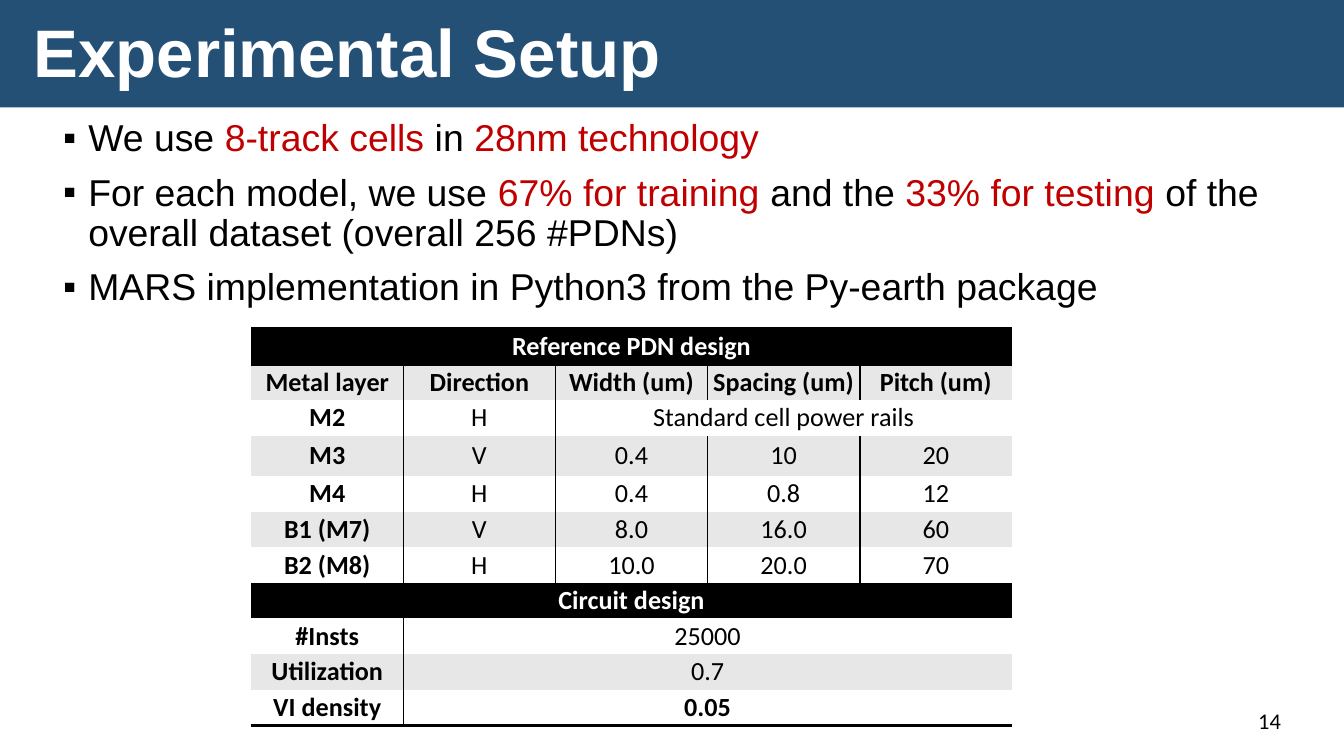
from lxml import etree
from pptx import Presentation
from pptx.dml.color import RGBColor
from pptx.enum.shapes import MSO_SHAPE
from pptx.enum.text import MSO_ANCHOR, MSO_AUTO_SIZE, PP_ALIGN
from pptx.oxml.ns import qn
from pptx.util import Pt

RECT = MSO_SHAPE.RECTANGLE
MIDDLE, BOTTOM = MSO_ANCHOR.MIDDLE, MSO_ANCHOR.BOTTOM
LEFT, CENTER, RIGHT = PP_ALIGN.LEFT, PP_ALIGN.CENTER, PP_ALIGN.RIGHT
NO_FIT = MSO_AUTO_SIZE.NONE

BLUE = RGBColor(0x25, 0x50, 0x76)
RED = RGBColor(0xC0, 0x00, 0x00)
GREY = RGBColor(0xE7, 0xE7, 0xE7)
BLACK = RGBColor(0, 0, 0)
WHITE = RGBColor(255, 255, 255)
PLAIN_GRID = "{2D5ABB26-0587-4C30-8999-92F81FD0307C}"

POINTS = [
    [("We use ", BLACK), ("8-track cells ", RED), ("in ", BLACK),
     ("28nm technology", RED)],
    [("For each model, we use ", BLACK), ("67% for training ", RED),
     ("and the ", BLACK), ("33% for testing ", RED),
     ("of the overall dataset (overall 256 #PDNs)", BLACK)],
    [("MARS implementation in Python3 from the Py-earth package", BLACK)],
]
ROWS = [
    ["Reference PDN design"],
    ["Metal layer", "Direction", "Width (um)", "Spacing (um)", "Pitch (um)"],
    ["M2", "H", "Standard cell power rails"],
    ["M3", "V", "0.4", "10", "20"],
    ["M4", "H", "0.4", "0.8", "12"],
    ["B1 (M7)", "V", "8.0", "16.0", "60"],
    ["B2 (M8)", "H", "10.0", "20.0", "70"],
    ["Circuit design"],
    ["#Insts", "25000"],
    ["Utilization", "0.7"],
    ["VI density", "0.05"],
]
COLS = 5
TALL = 3


def place(shape, box):
    shape.left, shape.top, shape.width, shape.height = map(Pt, box)


def style(para, name, size, color=None, bold=False):
    font = para.font
    font.name, font.size, font.bold = name, Pt(size), bold
    if color is not None:
        font.color.rgb = color


def add_head(slide, box):
    left, top, width, height = box
    band = slide.shapes.add_shape(RECT, *map(Pt, box))
    band.shadow.inherit = False
    band.fill.solid()
    band.fill.fore_color.rgb = BLUE
    band.line.fill.background()
    slide.shapes._spTree.insert(2, band._element)

    title = slide.shapes.title
    place(title, (left + 10.8, top + 7.2, width - 21.6, height - 12.2))
    frame = title.text_frame
    frame.text = "Experimental Setup"
    frame.auto_size = NO_FIT
    frame.vertical_anchor = MIDDLE
    para = frame.paragraphs[0]
    para.alignment = LEFT
    para.line_spacing = 0.9
    style(para, "Arial", 36, WHITE, True)


def add_list(slide, box):
    body = slide.placeholders[1]
    place(body, box)
    frame = body.text_frame
    frame.auto_size = NO_FIT
    for row, parts in enumerate(POINTS):
        para = frame.add_paragraph() if row else frame.paragraphs[0]
        para.line_spacing = 0.9
        para.space_before = Pt(7.5)
        props = para._p.get_or_add_pPr()
        props.set("marL", str(Pt(13.5)))
        props.set("indent", str(-Pt(13.5)))
        etree.SubElement(props, qn("a:buFont"), typeface="Arial")
        etree.SubElement(props, qn("a:buChar"), char="▪")
        style(para, "Arial", 20)
        for text, color in parts:
            run = para.add_run()
            run.text = text
            run.font.color.rgb = color


def add_edge(cell, side, width):
    props = cell._tc.get_or_add_tcPr()
    line = etree.SubElement(props, qn("a:" + side), w=str(Pt(width)))
    fill = etree.SubElement(line, qn("a:solidFill"))
    etree.SubElement(fill, qn("a:srgbClr"), val=str(BLACK))


def fill_cell(cell, text, back, color, bold):
    cell.fill.solid()
    cell.fill.fore_color.rgb = back
    cell.vertical_anchor = MIDDLE
    cell.margin_left = cell.margin_right = Pt(3)
    cell.margin_top = cell.margin_bottom = 0
    cell.text = text
    para = cell.text_frame.paragraphs[0]
    para.alignment = CENTER
    style(para, "Calibri", 14, color, bold)


def add_grid(slide, box):
    width, height = box[2:]
    last = len(ROWS) - 1
    step = (height - 21.6) / last
    frame = slide.shapes.add_table(len(ROWS), COLS, *map(Pt, box))
    table = frame.table
    table.first_row = table.horz_banding = False
    table._tbl.tblPr.find(qn("a:tableStyleId")).text = PLAIN_GRID
    for col in table.columns:
        col.width = Pt(width / COLS)
    for row, texts in enumerate(ROWS):
        table.rows[row].height = Pt(21.6 if row == TALL else step)
        head = len(texts) == 1
        back = BLACK if head else GREY if row % 2 else WHITE
        end = len(texts) - 1
        if end < COLS - 1:
            table.cell(row, end).merge(table.cell(row, COLS - 1))
        for col in range(COLS):
            cell = table.cell(row, col)
            if 0 < col <= end:
                add_edge(cell, "lnL", 1)
            if col < end:
                add_edge(cell, "lnR", 1)
            if row == 0:
                add_edge(cell, "lnT", 2)
            if row in (0, last):
                add_edge(cell, "lnB", 2)
            if col <= end:
                bold = col == 0 or row in (1, last)
                fill_cell(cell, texts[col], back,
                          WHITE if head else BLACK, bold)


def add_page(slide, box):
    frame = slide.shapes.add_textbox(*map(Pt, box)).text_frame
    frame.word_wrap = True
    frame.vertical_anchor = BOTTOM
    frame.text = "14"
    para = frame.paragraphs[0]
    para.alignment = RIGHT
    style(para, "Calibri", 12, BLACK)


def main():
    deck = Presentation()
    deck.slide_width, deck.slide_height = Pt(720), Pt(405)
    slide = deck.slides.add_slide(deck.slide_layouts[1])
    add_head(slide, (0, 0, 720, 57.6))
    add_list(slide, (26.6, 60.5, 666.8, 284.4))
    add_page(slide, (508.3, 375.1, 185, 21.6))
    add_grid(slide, (134.6, 176.2, 407.5, 212.4))
    deck.save("out.pptx")


if __name__ == "__main__":
    main()
